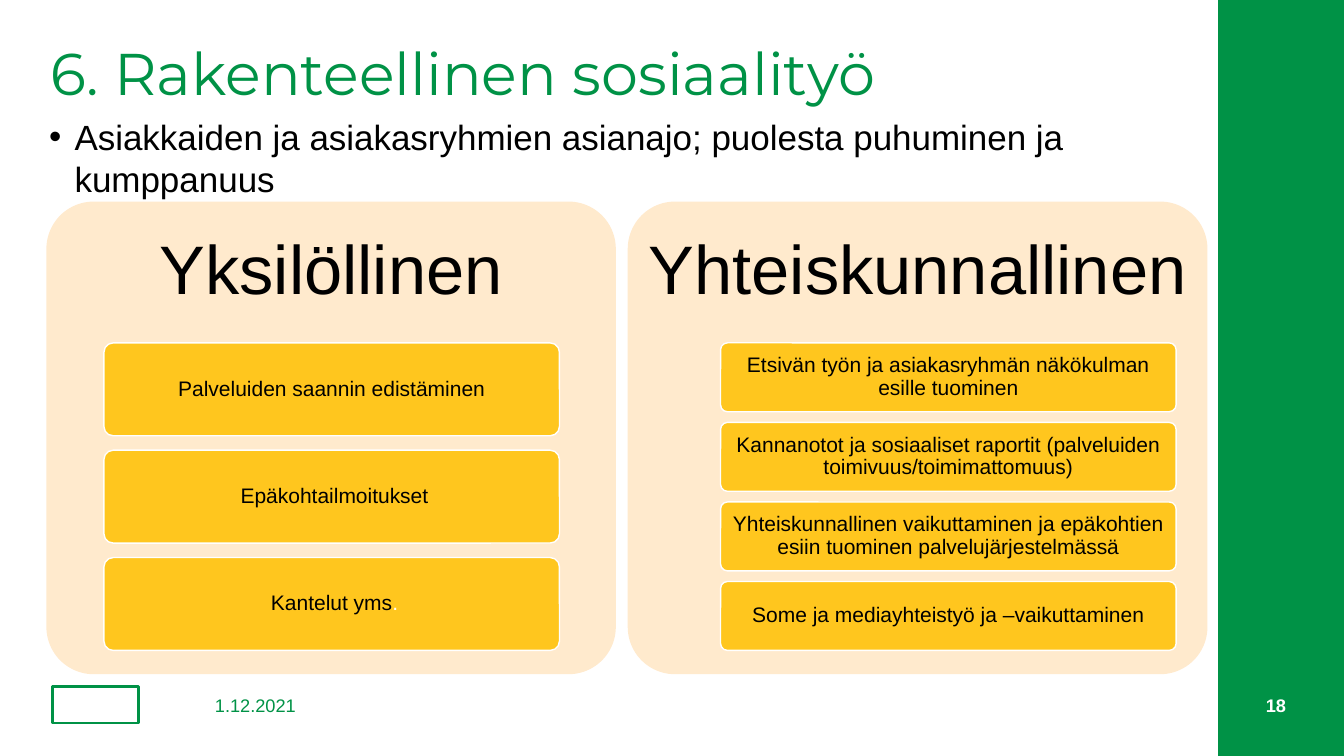
from lxml.etree import SubElement
from pptx import Presentation
from pptx.dml.color import RGBColor
from pptx.enum.shapes import MSO_SHAPE as Shape
from pptx.enum.text import MSO_ANCHOR as Anchor, PP_ALIGN as Align
from pptx.oxml.ns import qn
from pptx.util import Cm, Pt

GREEN = RGBColor(0x00, 0x92, 0x46)
CREAM = RGBColor(0xFF, 0xEA, 0xCD)
YELLOW = RGBColor(0xFF, 0xC6, 0x1E)
BLACK = RGBColor(0x00, 0x00, 0x00)
WHITE = RGBColor(0xFF, 0xFF, 0xFF)

prs = Presentation()
prs.slide_width, prs.slide_height = Cm(33.87), Cm(19.05)
slide = prs.slides.add_slide(prs.slide_layouts[6])


def add_block(kind, box, fill=None, line=None, line_width=1):
    block = slide.shapes.add_shape(kind, *[Cm(length) for length in box])
    block.shadow.inherit = False
    if kind == Shape.ROUNDED_RECTANGLE:
        block.adjustments[0] = 0.1
    for part, color in ((block.fill, fill), (block.line.fill, line)):
        if color is None:
            part.background()
        else:
            part.solid()
            part.fore_color.rgb = color
    if line is not None:
        block.line.width = Pt(line_width)
    return block


def write(holder, text, size, color, align=Align.LEFT, anchor=Anchor.TOP,
          spacing=1.0, inset=0, font="Arial", bold=False):
    frame = holder.text_frame
    margins = dict.fromkeys(
        ("margin_left", "margin_top", "margin_right", "margin_bottom"), Cm(inset))
    for name, value in {**margins, "word_wrap": True, "vertical_anchor": anchor}.items():
        setattr(frame, name, value)
    paragraph = frame.paragraphs[0]
    paragraph.alignment, paragraph.line_spacing = align, spacing
    run = paragraph.add_run()
    run.text = text
    for name, value in {"name": font, "size": Pt(size), "bold": bold}.items():
        setattr(run.font, name, value)
    run.font.color.rgb = color
    return paragraph


# Green side band and plain emblem outline
add_block(Shape.RECTANGLE, (30.7, 0, 3.17, 19.05), fill=GREEN)
add_block(Shape.RECTANGLE, (1.32, 17.3, 2.18, 0.92), line=GREEN, line_width=2)

# Title, bullet, date and slide number
texts = [
    ((1.27, 1.14, 29.2, 2.18), "6. Rakenteellinen sosiaalityö",
     dict(size=42, color=GREEN, font="Montserrat", spacing=0.9)),
    ((1.24, 2.92, 29.2, 2.1),
     "Asiakkaiden ja asiakasryhmien asianajo; puolesta puhuminen ja kumppanuus",
     dict(size=25, color=BLACK)),
    ((4.62, 17.42, 3.63, 0.71), "1.12.2021",
     dict(size=13, color=GREEN, align=Align.CENTER, anchor=Anchor.MIDDLE)),
    ((28.98, 17.42, 3.43, 0.71), "18",
     dict(size=13, color=WHITE, align=Align.RIGHT, anchor=Anchor.MIDDLE, bold=True)),
]
for box, text, style in texts:
    paragraph = write(slide.shapes.add_textbox(*[Cm(length) for length in box]), text, **style)
    if style["size"] == 25:
        properties = paragraph._p.get_or_add_pPr()
        properties.set("marL", str(Cm(0.64)))
        properties.set("indent", str(-Cm(0.64)))
        SubElement(properties, qn("a:buFont")).set("typeface", "Arial")
        SubElement(properties, qn("a:buChar")).set("char", "•")

# Two panels, each with a heading and a stack of cards
panels = [
    ("Yksilöllinen", 1.17, 14.35, 2.62, [
        "Palveluiden saannin edistäminen",
        " Epäkohtailmoitukset",
        " Kantelut yms",
    ]),
    ("Yhteiskunnallinen", 15.82, 14.61, 18.16, [
        "Etsivän työn ja asiakasryhmän näkökulman esille tuominen",
        "Kannanotot ja sosiaaliset raportit (palveluiden toimivuus/toimimattomuus)",
        "Yhteiskunnallinen vaikuttaminen ja epäkohtien esiin tuominen palvelujärjestelmässä",
        "Some ja mediayhteistyö ja –vaikuttaminen",
    ]),
]
PANEL_TOP, PANEL_HEIGHT, HEADING_HEIGHT = 5.08, 11.91, 3.58
STACK_TOP, STACK_HEIGHT, CARD_WIDTH = 8.64, 7.75, 11.48
GAP_RATIO = 0.155  # gap between cards as a share of card height
centered = dict(color=BLACK, align=Align.CENTER, anchor=Anchor.MIDDLE, spacing=0.9)

for heading, left, width, card_left, cards in panels:
    add_block(Shape.ROUNDED_RECTANGLE, (left, PANEL_TOP, width, PANEL_HEIGHT), fill=CREAM)
    heading_box = slide.shapes.add_textbox(
        Cm(left), Cm(PANEL_TOP), Cm(width), Cm(HEADING_HEIGHT))
    write(heading_box, heading, 49, inset=0.25, **centered)
    card_height = STACK_HEIGHT / (len(cards) + GAP_RATIO * (len(cards) - 1))
    for row, text in enumerate(cards):
        card_top = STACK_TOP + row * card_height * (1 + GAP_RATIO)
        card = add_block(Shape.ROUNDED_RECTANGLE,
                         (card_left, card_top, CARD_WIDTH, card_height), YELLOW, WHITE)
        paragraph = write(card, text, 15, inset=0.1, **centered)
        # White full stop after the abbreviation
        if text.endswith("yms"):
            stop = paragraph.add_run()
            stop.text = "."
            stop.font.name, stop.font.size = "Arial", Pt(15)
            stop.font.color.rgb = WHITE

prs.save("out.pptx")
